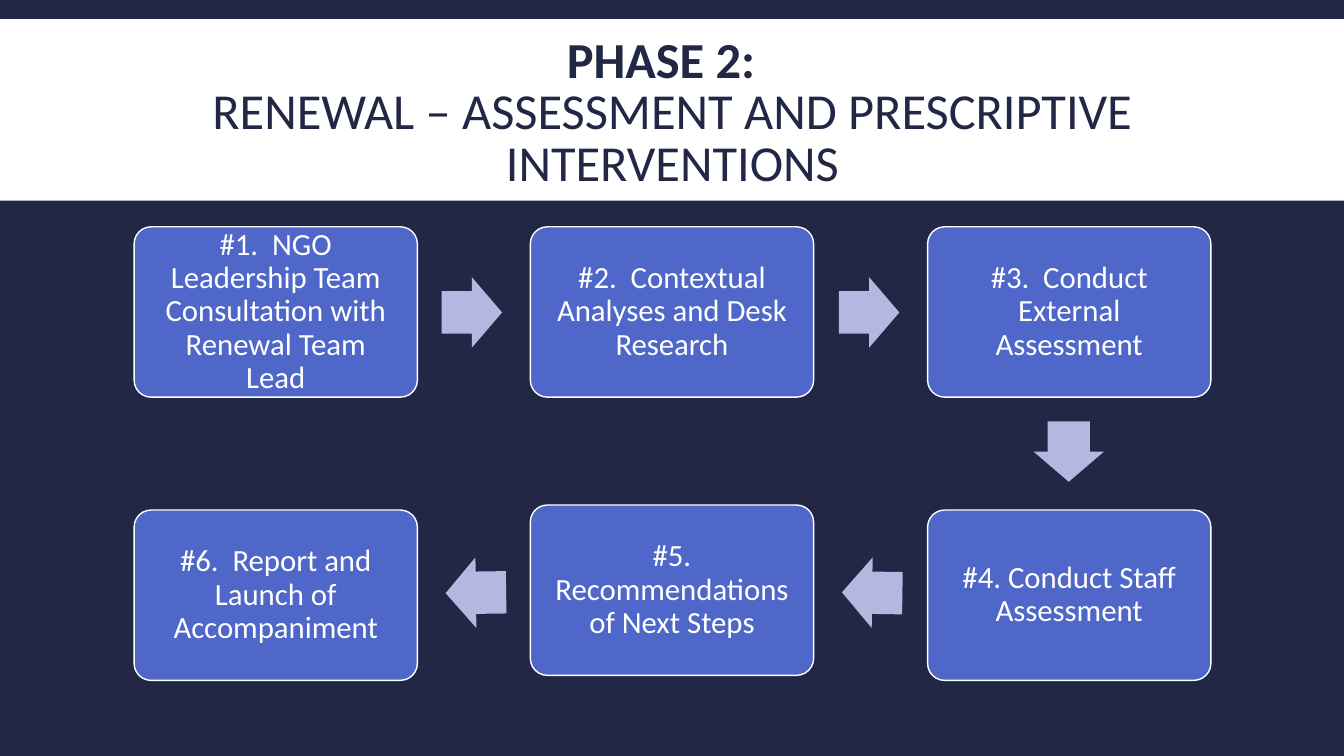
from dataclasses import dataclass

from pptx import Presentation
from pptx import util as u
from pptx.dml.color import RGBColor
from pptx.enum import shapes, text

EMU_PER_PX = 9144


@dataclass(frozen=True)
class Theme:
    font: str = "Calibri"
    navy: str = "212745"
    blue: str = "4E67C8"
    lavender: str = "B2B8E0"
    white: str = "FFFFFF"
    title_size: int = 36
    step_size: int = 22


THEME = Theme()
PAGE_WIDTH, PAGE_HEIGHT = 1333, 750
COLUMNS = (133, 526, 920)
TOP_ROW, BOTTOM_ROW = 225, 506
STEP_WIDTH, STEP_HEIGHT = 281, 169
ARROW_WIDTH, ARROW_HEIGHT = 60, 70

STEPS = (
    ("#1.  NGO Leadership Team Consultation with Renewal Team Lead", COLUMNS[0], TOP_ROW),
    ("#2.  Contextual Analyses and Desk Research", COLUMNS[1], TOP_ROW),
    ("#3.  Conduct External Assessment", COLUMNS[2], TOP_ROW),
    ("#4. Conduct Staff Assessment", COLUMNS[2], BOTTOM_ROW),
    ("#5. Recommendations of Next Steps", COLUMNS[1], BOTTOM_ROW - 5),
    ("#6.  Report and Launch of Accompaniment", COLUMNS[0], BOTTOM_ROW),
)
ARROWS = (
    (438, 275, 0),
    (832, 275, 0),
    (1030, 413, 90),
    (835, 553, 180.8),
    (442, 553, 179.2),
)


def px(length):
    return u.Emu(length * EMU_PER_PX)


def color(value):
    return RGBColor.from_string(value)


def add_block(page, kind, left, top, width, height, fill):
    block = page.shapes.add_shape(kind, px(left), px(top), px(width), px(height))
    block.shadow.inherit = False
    block.fill.solid()
    block.fill.fore_color.rgb = color(fill)
    block.line.fill.background()
    return block


def format_text(frame, size, ink, spacing):
    frame.word_wrap = True
    frame.auto_size = text.MSO_AUTO_SIZE.NONE
    frame.vertical_anchor = text.MSO_ANCHOR.MIDDLE
    for para in frame.paragraphs:
        para.alignment = text.PP_ALIGN.CENTER
        para.line_spacing = spacing
        for span in para.runs:
            span.font.name = THEME.font
            span.font.size = u.Pt(size)
            span.font.color.rgb = color(ink)


def add_title(page, lines):
    add_block(page, shapes.MSO_SHAPE.RECTANGLE, 0, 19, PAGE_WIDTH, 180, THEME.white)
    title = page.shapes.title
    page.shapes._spTree.append(title._element)
    title.left, title.top, title.width, title.height = map(px, (54, 31, 1226, 165))
    title.text_frame.text = "\v".join(lines)
    format_text(title.text_frame, THEME.title_size, THEME.navy, 0.85)
    for index, span in enumerate(title.text_frame.paragraphs[0].runs):
        span.font.bold = index == 0


def add_step(page, label, left, top):
    box = add_block(page, shapes.MSO_SHAPE.ROUNDED_RECTANGLE,
                    left, top, STEP_WIDTH, STEP_HEIGHT, THEME.blue)
    box.adjustments[0] = 0.1
    box.line.color.rgb = color(THEME.white)
    box.line.width = u.Pt(1)
    frame = box.text_frame
    frame.text = label
    frame.margin_left = frame.margin_right = px(14)
    frame.margin_top = frame.margin_bottom = px(14)
    format_text(frame, THEME.step_size, THEME.white, 0.9)


def add_arrow(page, left, top, rotation):
    arrow = add_block(page, shapes.MSO_SHAPE.RIGHT_ARROW,
                      left, top, ARROW_WIDTH, ARROW_HEIGHT, THEME.lavender)
    arrow.adjustments[0] = 0.6
    arrow.adjustments[1] = 0.5
    arrow.rotation = rotation


def main():
    deck = Presentation()
    deck.slide_width, deck.slide_height = px(PAGE_WIDTH), px(PAGE_HEIGHT)
    page = deck.slides.add_slide(deck.slide_layouts[5])
    page.background.fill.solid()
    page.background.fill.fore_color.rgb = color(THEME.navy)
    add_title(page, ("PHASE 2:  ", "RENEWAL – ASSESSMENT AND PRESCRIPTIVE INTERVENTIONS"))
    for step in STEPS:
        add_step(page, *step)
    for arrow in ARROWS:
        add_arrow(page, *arrow)
    deck.save("out.pptx")


if __name__ == "__main__":
    main()
